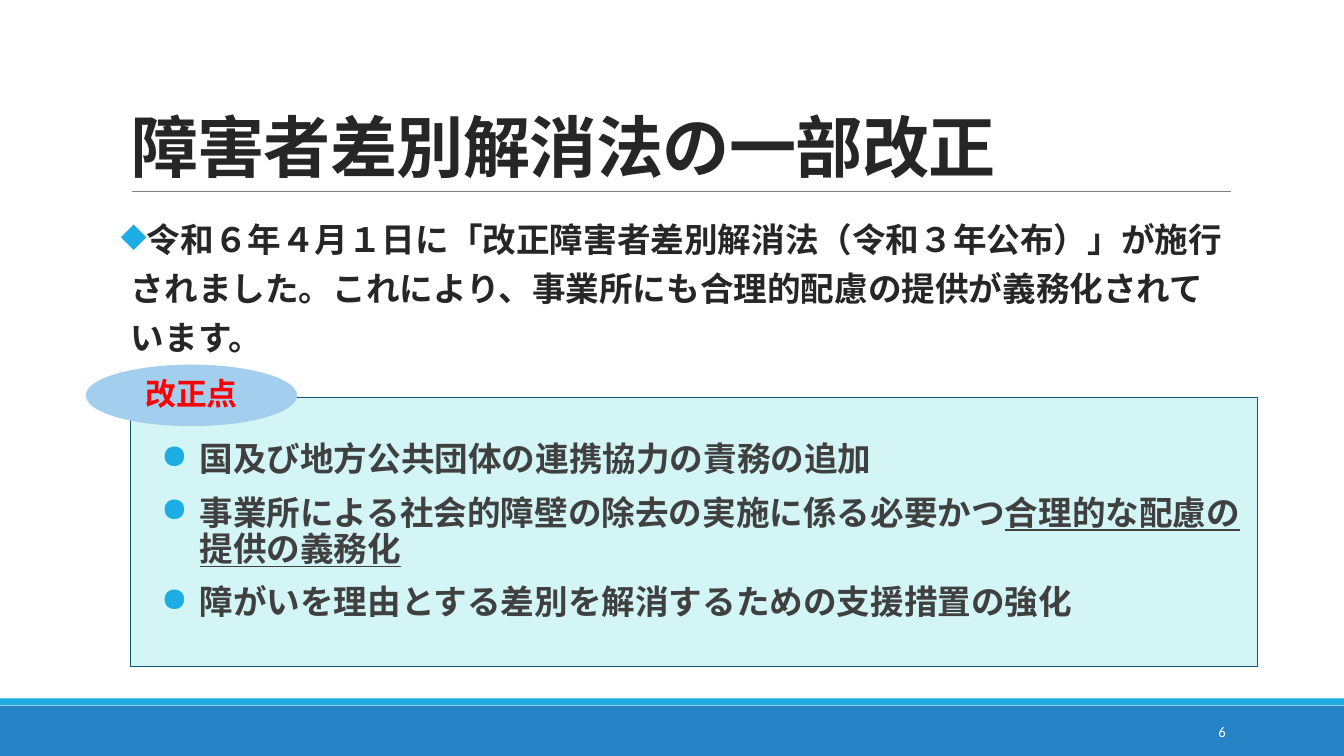
from lxml.etree import SubElement
from pptx import Presentation
from pptx.dml.color import RGBColor
from pptx.enum.shapes import MSO_CONNECTOR, MSO_SHAPE
from pptx.enum.text import MSO_ANCHOR, MSO_AUTO_SIZE, PP_ALIGN
from pptx.oxml.ns import qn
from pptx.util import Cm, Pt

BLUE = RGBColor(0x26, 0x83, 0xC6)
SKY = RGBColor(0x1C, 0xAD, 0xE4)
GRAY = RGBColor(0x80, 0x80, 0x80)
INK = RGBColor(0x26, 0x26, 0x26)
DARK_GRAY = RGBColor(0x40, 0x40, 0x40)
PALE_CYAN = RGBColor(0xD3, 0xF5, 0xF6)
DEEP_TEAL = RGBColor(0x0E, 0x57, 0x72)
PALE_BLUE = RGBColor(0xA3, 0xCE, 0xED)
RED = RGBColor(0xFF, 0x00, 0x00)
WHITE = RGBColor(0xFF, 0xFF, 0xFF)

JAPANESE_FONT = "Noto Sans CJK JP"
AMENDMENTS = [
    [("国及び地方公共団体の連携協力の責務の追加", False)],
    [("事業所による社会的障壁の除去の実施に係る必要かつ", False),
     ("合理的な配慮の\v提供の義務化", True)],
    [("障がいを理由とする差別を解消するための支援措置の強化", False)],
]


def style_paragraph(paragraph, size, color, alignment=PP_ALIGN.LEFT,
                    name=JAPANESE_FONT, bold=True):
    paragraph.alignment = alignment
    font = paragraph.font
    font.size = Pt(size)
    font.bold = bold
    font.color.rgb = color
    font.name = name
    properties = paragraph._p.pPr.find(qn("a:defRPr"))
    SubElement(properties, qn("a:ea"), typeface=name)


def add_bullet(paragraph, symbol, indent, hanging, line_height):
    paragraph.line_spacing = Pt(line_height)
    paragraph.space_before = paragraph.space_after = Pt(6)
    properties = paragraph._p.pPr
    properties.set("marL", str(indent))
    properties.set("indent", str(-hanging))
    color = SubElement(properties, qn("a:buClr"))
    SubElement(color, qn("a:srgbClr"), val=str(SKY))
    bullet = SubElement(properties, qn("a:buChar"), char=symbol)
    defaults = properties.find(qn("a:defRPr"))
    bullet.addnext(defaults)


def add_filled_shape(slide, kind, left, top, width, height, fill, line=None):
    shape = slide.shapes.add_shape(kind, Cm(left), Cm(top), Cm(width), Cm(height))
    shape.shadow.inherit = False
    shape.fill.solid()
    shape.fill.fore_color.rgb = fill
    if line is None:
        shape.line.fill.background()
    else:
        shape.line.color.rgb = line
        shape.line.width = Pt(0.75)
    return shape


def add_text_box(slide, left, top, width, height, text):
    box = slide.shapes.add_textbox(Cm(left), Cm(top), Cm(width), Cm(height))
    box.text_frame.word_wrap = True
    box.text_frame.text = text
    return box.text_frame


def add_title_rule(slide):
    rule = slide.shapes.add_connector(
        MSO_CONNECTOR.STRAIGHT, Cm(3.33), Cm(4.83), Cm(31.01), Cm(4.83))
    rule.line.color.rgb = GRAY
    rule.line.width = Pt(0.5)
    SubElement(rule._element.spPr, qn("a:effectLst"))


def format_title(slide, text):
    title = slide.shapes.title
    title.left, title.top = Cm(3.05), Cm(0.79)
    title.width, title.height = Cm(27.94), Cm(4.04)
    frame = title.text_frame
    frame.text = text
    frame.auto_size = MSO_AUTO_SIZE.NONE
    frame.vertical_anchor = MSO_ANCHOR.BOTTOM
    paragraph = frame.paragraphs[0]
    paragraph.line_spacing = 0.85
    style_paragraph(paragraph, 48, INK)
    paragraph._p.pPr.find(qn("a:defRPr")).set("spc", "-50")


def add_introduction(slide, text):
    frame = add_text_box(slide, 3.05, 5.16, 27.94, 11.18, text)
    frame.margin_left = frame.margin_right = 0
    paragraph = frame.paragraphs[0]
    style_paragraph(paragraph, 24, INK)
    add_bullet(paragraph, "◆", Cm(0.25), Cm(0.25), 35)


def add_amendment_panel(slide):
    panel = add_filled_shape(slide, MSO_SHAPE.RECTANGLE, 3.28, 10.01, 28.42, 6.78,
                             PALE_CYAN, DEEP_TEAL)
    frame = panel.text_frame
    frame.margin_left = frame.margin_right = 0
    frame.vertical_anchor = MSO_ANCHOR.MIDDLE
    for index, parts in enumerate(AMENDMENTS):
        paragraph = frame.add_paragraph() if index else frame.paragraphs[0]
        paragraph.level = 1
        style_paragraph(paragraph, 24, DARK_GRAY)
        add_bullet(paragraph, "●", Cm(1.75), Cm(0.97), 26)
        for text, underlined in parts:
            for position, line in enumerate(text.split("\v")):
                if position:
                    paragraph.add_line_break()
                run = paragraph.add_run()
                run.text = line
                if underlined:
                    run.font.underline = True


def add_panel_label(slide, text):
    label = add_filled_shape(slide, MSO_SHAPE.OVAL, 2.16, 9.19, 5.33, 1.55, PALE_BLUE)
    frame = label.text_frame
    frame.text = text
    frame.vertical_anchor = MSO_ANCHOR.MIDDLE
    paragraph = frame.paragraphs[0]
    paragraph.line_spacing = 0.87
    style_paragraph(paragraph, 22, RED, PP_ALIGN.CENTER)


def add_page_number(slide, text):
    frame = add_text_box(slide, 27.51, 17.93, 3.63, 1.02, text)
    frame.vertical_anchor = MSO_ANCHOR.MIDDLE
    style_paragraph(frame.paragraphs[0], 10.5, WHITE, PP_ALIGN.RIGHT, "Calibri", False)


def main():
    presentation = Presentation()
    presentation.slide_width, presentation.slide_height = Cm(33.87), Cm(19.05)
    slide = presentation.slides.add_slide(presentation.slide_layouts[5])
    add_filled_shape(slide, MSO_SHAPE.RECTANGLE, 0, 17.78, 33.87, 1.27, BLUE)
    add_filled_shape(slide, MSO_SHAPE.RECTANGLE, 0, 17.6, 33.87, 0.17, SKY)
    add_title_rule(slide)
    format_title(slide, "障害者差別解消法の一部改正")
    add_introduction(slide, "令和６年４月１日に「改正障害者差別解消法（令和３年公布）」が施行"
                            "されました。これにより、事業所にも合理的配慮の提供が義務化されています。")
    add_amendment_panel(slide)
    add_panel_label(slide, "改正点")
    add_page_number(slide, "6")
    presentation.save("out.pptx")


if __name__ == "__main__":
    main()
